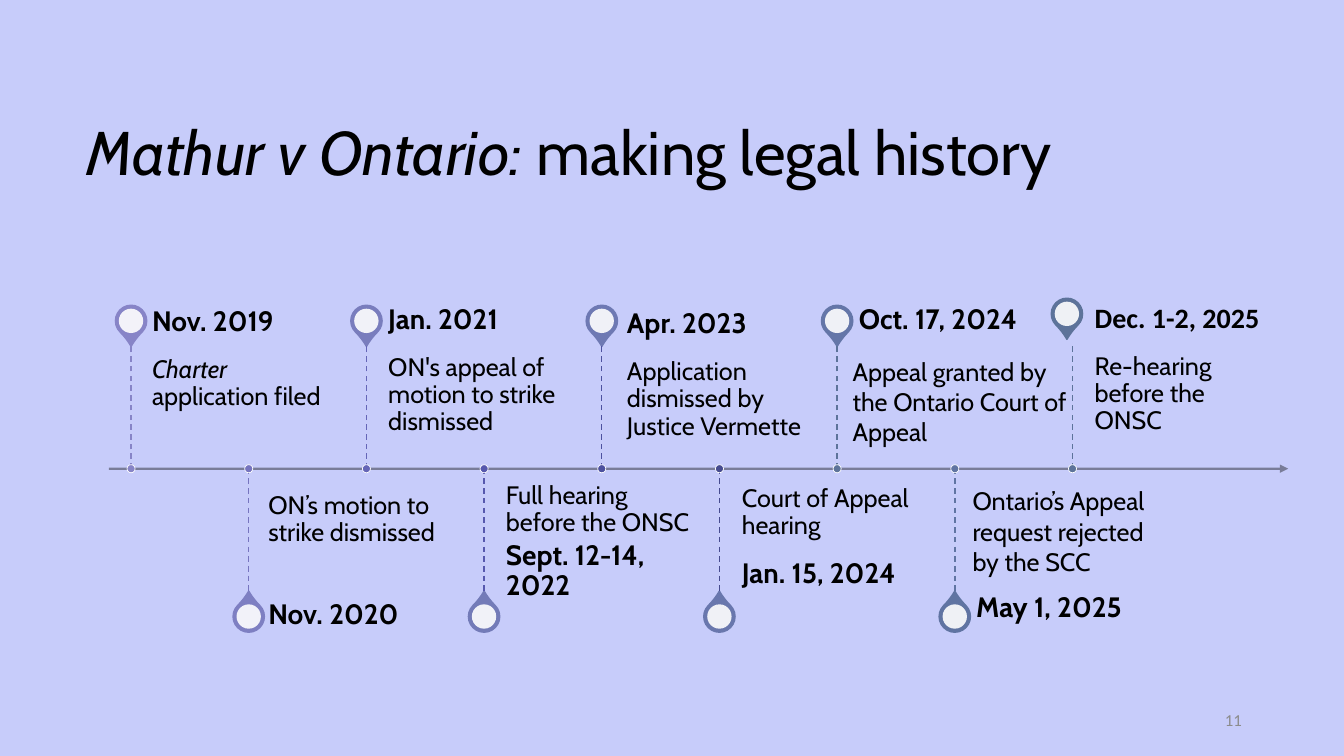
import pptx
import pptx.dml.color
import pptx.enum.dml
import pptx.enum.shapes
import pptx.enum.text
import pptx.oxml.ns
import pptx.util
from lxml import etree

Pt = pptx.util.Pt
SHAPE = pptx.enum.shapes.MSO_SHAPE
ANCHOR = pptx.enum.text.MSO_ANCHOR
ALIGN = pptx.enum.text.PP_ALIGN
FIT = pptx.enum.text.MSO_AUTO_SIZE

AXIS_Y = 334.8
FIRST_X, STEP = 93.6, 84.06
STEM = 90
PIN_REACH = 105.6
DATE_WIDTH, DATE_HEIGHT = 137.5, 31.7
NOTE_HEIGHT = 90

# date, note, date offset from stem, date top, pin colour, stem colour
EVENTS = [
    ("Nov. 2019", "_Charter_ application filed", 15, 214.6, "8784C7", "8784C7"),
    ("Nov. 2020", "ON’s motion to strike dismissed", 14, 424.1, "7E7FC2", "7674BF"),
    ("Jan. 2021", "ON's appeal of motion to strike dismissed", 15.6, 213.1, "797DBD", "6565B7"),
    ("Sept. 12-14, 2022", "Full hearing before the ONSC", 15.6, 392.4, "737BB8", "5658AE"),
    ("Apr. 2023", "Application dismissed by Justice Vermette", 18, 216, "6E79B3", "4D519F"),
    ("Jan. 15, 2024", "Court of Appeal hearing", 16, 394.6, "6977AD", "464B8F"),
    ("Oct. 17, 2024", None, 15.5, 213.1, "6476A8", "5D739A"),
    ("May 1, 2025", None, 15.2, 419, "6074A2", "6074A2"),
    ("Dec. 1-2, 2025", "Re-hearing before the ONSC", 15.8, 212.4, "5D739A", "5D739A"),
]
NOTE_LIFT = {"Nov. 2020": 24.5}
PIN_SHIFT = {"Dec. 1-2, 2025": (-4, -5)}
DATE_FONT = {"Dec. 1-2, 2025": "Calibri"}


def paint(fill, colour, opacity=100):
    fill.solid()
    fill.fore_color.rgb = pptx.dml.color.RGBColor.from_string(colour)
    if opacity < 100:
        tag = pptx.oxml.ns.qn("a:srgbClr")
        for node in fill._xPr.iter(tag):
            alpha = etree.SubElement(node, pptx.oxml.ns.qn("a:alpha"))
            alpha.set("val", str(opacity * 1000))


def write(frame, text, size=18, font="Cabin", colour="000000", bold=False,
          align=ALIGN.LEFT, anchor=ANCHOR.TOP, spacing=0.9,
          insets=(7.2, 3.6, 7.2, 3.6), fit=FIT.NONE):
    """Fill a text frame; underscores enclose italic words."""
    frame.word_wrap = True
    frame.auto_size = fit
    frame.vertical_anchor = anchor
    (frame.margin_left, frame.margin_top,
     frame.margin_right, frame.margin_bottom) = map(Pt, insets)
    for index, line in enumerate(text.split("\n")):
        para = frame.add_paragraph() if index else frame.paragraphs[0]
        para.alignment = align
        para.line_spacing = spacing
        for part, words in enumerate(line.split("_")):
            if not words:
                continue
            span = para.add_run()
            span.text = words
            span.font.size = Pt(size)
            span.font.name = font
            span.font.bold = bold
            span.font.italic = part % 2 == 1
            paint(span.font.fill, colour)


class TimelinePage:
    def __init__(self, deck, background):
        self.page = deck.slides.add_slide(deck.slide_layouts[5])
        self.shapes = self.page.shapes
        paint(self.page.background.fill, background)

    def title(self, text, left, top, width, height):
        box = self.shapes.title
        box.left, box.top, box.width, box.height = map(Pt, (left, top, width, height))
        write(box.text_frame, text, size=44, anchor=ANCHOR.MIDDLE)

    def text(self, text, left, top, width, height, **style):
        box = self.shapes.add_textbox(*map(Pt, (left, top, width, height)))
        write(box.text_frame, text, **style)

    def line(self, start, end, colour, width, opacity=100, dashed=False, arrow=False):
        connector = self.shapes.add_connector(
            pptx.enum.shapes.MSO_CONNECTOR.STRAIGHT, *map(Pt, start + end))
        connector.line.width = Pt(width)
        paint(connector.line.fill, colour, opacity)
        if dashed:
            connector.line.dash_style = pptx.enum.dml.MSO_LINE.DASH
        if arrow:
            outline = connector.line._get_or_add_ln()
            etree.SubElement(outline, pptx.oxml.ns.qn("a:tailEnd")).set("type", "triangle")
        etree.SubElement(connector._element.spPr, pptx.oxml.ns.qn("a:effectLst"))

    def centred(self, kind, x, y, size, fill, opacity=100, outline=None, width=1):
        """Add a square-framed shape around a centre point."""
        shape = self.shapes.add_shape(
            kind, Pt(x - size / 2), Pt(y - size / 2), Pt(size), Pt(size))
        shape.shadow.inherit = False
        paint(shape.fill, fill, opacity)
        if outline:
            paint(shape.line.fill, outline)
            shape.line.width = Pt(width)
        else:
            shape.line.fill.background()
        return shape

    def pin(self, x, y, colour, rotation):
        drop = self.centred(SHAPE.TEAR, x, y, 22.4, colour, outline=colour)
        drop.adjustments[0] = 1.15
        drop.rotation = rotation
        self.centred(SHAPE.OVAL, x, y, 17.4, "FFFFFF", opacity=90)

    def event(self, index, date, note, offset, date_top, pin_colour, stem_colour):
        above = index % 2 == 0
        side = -1 if above else 1
        x = FIRST_X + index * STEP
        left = x + offset
        shift_x, shift_y = PIN_SHIFT.get(date, (0, 0))
        self.pin(x + shift_x, AXIS_Y + side * PIN_REACH + shift_y,
                 pin_colour, 135 if above else 315)
        if note and above:
            self.text(note, left, date_top + DATE_HEIGHT, DATE_WIDTH, NOTE_HEIGHT,
                      insets=(0, 8.6, 8.6, 13.7))
        elif note:
            note_top = date_top - NOTE_HEIGHT - NOTE_LIFT.get(date, 0)
            self.text(note, left, note_top, DATE_WIDTH, NOTE_HEIGHT,
                      anchor=ANCHOR.BOTTOM, insets=(0, 13.7, 0, 8.6))
        self.text(date, left, date_top, DATE_WIDTH, DATE_HEIGHT, size=20, bold=True,
                  font=DATE_FONT.get(date, "Cabin"), anchor=ANCHOR.MIDDLE,
                  insets=(0, 0, 10, 0))
        self.line((x, AXIS_Y), (x, AXIS_Y + side * STEM), stem_colour, 1, dashed=True)
        self.centred(SHAPE.OVAL, x, AXIS_Y, 5.8, stem_colour, outline="FFFFFF", width=0.5)


def main():
    deck = pptx.Presentation()
    deck.slide_width, deck.slide_height = Pt(960), Pt(540)
    page = TimelinePage(deck, "C7CCFA")
    page.title("_Mathur v Ontario: _making legal history", 54.7, 69.8, 850.3, 82.8)
    page.text("11", 678.2, 500.4, 216, 28.8, size=12, font="Calibri", colour="8C8C8C",
              align=ALIGN.RIGHT, anchor=ANCHOR.MIDDLE)
    page.line((77.8, AXIS_Y), (920.2, AXIS_Y), "000000", 1.5, opacity=38, arrow=True)
    for index, event in enumerate(EVENTS):
        page.event(index, *event)
    page.text("Ontario’s Appeal request rejected by the SCC", 687.6, 343.4, 149, 72.7,
              spacing=1.0, fit=FIT.SHAPE_TO_FIT_TEXT)
    page.text("Appeal granted by\nthe Ontario Court of Appeal", 601.9, 250.6, 190, 72.7,
              spacing=1.0, fit=FIT.SHAPE_TO_FIT_TEXT)
    deck.save("out.pptx")


if __name__ == "__main__":
    main()
